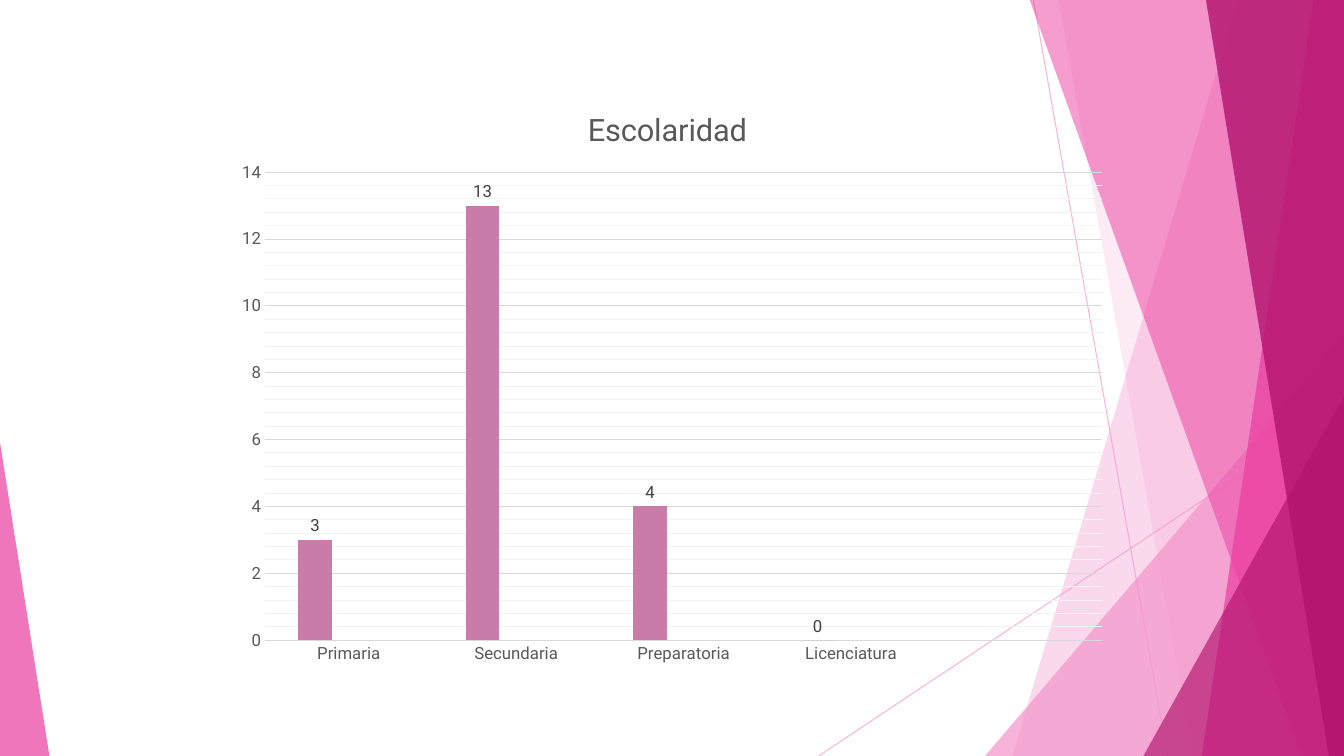
from lxml import etree
from pptx import Presentation
from pptx.chart.data import CategoryChartData
from pptx.dml.color import RGBColor
from pptx.enum.chart import XL_CHART_TYPE, XL_LABEL_POSITION, XL_TICK_MARK
from pptx.enum.shapes import MSO_CONNECTOR, MSO_SHAPE
from pptx.oxml import parse_xml
from pptx.oxml.ns import nsdecls, qn
from pptx.util import Inches, Pt

COLUMN = XL_CHART_TYPE.COLUMN_CLUSTERED
OUTSIDE_END = XL_LABEL_POSITION.OUTSIDE_END
NO_TICK = XL_TICK_MARK.NONE
STRAIGHT = MSO_CONNECTOR.STRAIGHT
TRIANGLE = MSO_SHAPE.ISOSCELES_TRIANGLE

BLACK = RGBColor(0x00, 0x00, 0x00)
LABEL_GRAY = RGBColor(0x40, 0x40, 0x40)
AXIS_GRAY = RGBColor(0x59, 0x59, 0x59)
GRID_GRAY = RGBColor(0xD9, 0xD9, 0xD9)
MINOR_GRAY = RGBColor(0xF2, 0xF2, 0xF2)
LIGHT_PINK = RGBColor(0xF4, 0x96, 0xCB)
HOT_PINK = RGBColor(0xEB, 0x3D, 0x9F)
MAGENTA = RGBColor(0xB2, 0x13, 0x6D)
MAUVE = RGBColor(0xCA, 0x7C, 0xA8)
PALE_PINK = RGBColor(0xF8, 0xC3, 0xDF)

FONT = "Roboto"
RIGHT, TOP, BOTTOM = 13.33, -0.01, 7.5


def style_font(font, size, color):
    font.name = FONT
    font.size = Pt(size)
    font.bold = False
    font.color.rgb = color


def write_text(frame, text, size=12, color=AXIS_GRAY):
    run = frame.paragraphs[0].add_run()
    run.text = text
    style_font(run.font, size, color)


def set_opacity(fill_parent, percent):
    color = fill_parent.find(".//" + qn("a:srgbClr"))
    etree.SubElement(color, qn("a:alpha")).set("val", str(percent * 1000))


def set_layout(element, inner=False, **fractions):
    for old in element.findall(qn("c:layout")):
        element.remove(old)
    target = '<c:layoutTarget val="inner"/>' if inner else ""
    modes = "".join(f'<c:{key}Mode val="edge"/>' for key in ("x", "y"))
    values = "".join(f'<c:{key} val="{value}"/>' for key, value in fractions.items())
    layout = parse_xml(
        f'<c:layout {nsdecls("c")}><c:manualLayout>{target}{modes}{values}'
        "</c:manualLayout></c:layout>"
    )
    text = element.find(qn("c:tx"))
    if text is None:
        element.insert(0, layout)
    else:
        text.addnext(layout)


class FacetSlide:
    def __init__(self, slide):
        self.slide = slide

    def line(self, start, end, color, opacity):
        ends = [Inches(value) for value in (*start, *end)]
        ray = self.slide.shapes.add_connector(STRAIGHT, *ends)
        ray.line.color.rgb = color
        ray.line.width = Pt(0.75)
        properties = ray._element.spPr
        set_opacity(properties, opacity)
        etree.SubElement(properties, qn("a:effectLst"))

    def paint(self, facet, color, opacity):
        facet.shadow.inherit = False
        facet.fill.solid()
        facet.fill.fore_color.rgb = color
        set_opacity(facet._element.spPr, opacity)
        facet.line.fill.background()

    def band(self, top_left, bottom_left, color, opacity):
        corners = [(RIGHT, TOP), (RIGHT, BOTTOM), (bottom_left, BOTTOM)]
        builder = self.slide.shapes.build_freeform(Inches(top_left), Inches(TOP))
        builder.add_line_segments([(Inches(x), Inches(y)) for x, y in corners])
        self.paint(builder.convert_to_shape(), color, opacity)

    def triangle(self, left, top, width, apex, color, opacity):
        box = [Inches(value) for value in (left, top, width, BOTTOM - top)]
        facet = self.slide.shapes.add_shape(TRIANGLE, *box)
        facet.adjustments[0] = apex
        self.paint(facet, color, opacity)

    def rule(self, line, color):
        line.color.rgb = color
        line.width = Pt(0.75)

    def minor_gridlines(self, axis, color):
        axis.has_minor_gridlines = True
        gridlines = axis._element.find(qn("c:minorGridlines"))
        gridlines.append(parse_xml(
            f'<c:spPr {nsdecls("c", "a")}><a:ln w="{Pt(0.75)}"><a:solidFill>'
            f'<a:srgbClr val="{color}"/></a:solidFill></a:ln></c:spPr>'
        ))

    def column_chart(self, title, categories, series, box):
        data = CategoryChartData()
        data.categories = categories
        for name, values, _ in series:
            data.add_series(name, values)
        frame = self.slide.shapes.add_chart(COLUMN, *map(Inches, box), data)
        chart = frame.chart
        style_font(chart.font, 10, BLACK)
        chart.has_legend = False
        chart.has_title = True
        write_text(chart.chart_title.text_frame, title, size=22)
        set_layout(chart.chart_title._element, x=0.4, y=0.04)
        set_layout(chart._chartSpace.chart.plotArea, inner=True,
                   x=0.046, y=0.155, w=0.934, h=0.783)

        plot = chart.plots[0]
        plot.vary_by_categories = False
        plot.gap_width = 199
        plot.overlap = 0
        for columns, (_, _, color) in zip(plot.series, series):
            columns.format.fill.solid()
            columns.format.fill.fore_color.rgb = color
            labels = columns.data_labels
            labels.show_value = True
            labels.position = OUTSIDE_END
            style_font(labels.font, 12, LABEL_GRAY)

        for axis in (chart.category_axis, chart.value_axis):
            axis.major_tick_mark = NO_TICK
            axis.minor_tick_mark = NO_TICK
            style_font(axis.tick_labels.font, 12, AXIS_GRAY)
        self.rule(chart.category_axis.format.line, GRID_GRAY)

        scale = chart.value_axis
        scale.minimum_scale, scale.maximum_scale = 0, 14
        scale.major_unit, scale.minor_unit = 2, 0.4
        scale.format.line.fill.background()
        scale.has_major_gridlines = True
        self.rule(scale.major_gridlines.format.line, GRID_GRAY)
        self.minor_gridlines(scale, MINOR_GRAY)


def main():
    deck = Presentation()
    deck.slide_width = Inches(13.33)
    deck.slide_height = Inches(7.5)
    page = FacetSlide(deck.slides.add_slide(deck.slide_layouts[6]))

    page.line((10.25, 0), (11.58, BOTTOM), LIGHT_PINK, 70)
    page.line((RIGHT, 4.03), (8.12, BOTTOM), LIGHT_PINK, 70)
    page.band(12.28, 10.04, LIGHT_PINK, 36)
    page.band(10.5, 11.83, LIGHT_PINK, 20)
    page.triangle(9.77, 3.33, 3.56, 1, LIGHT_PINK, 72)
    page.band(10.21, 12.91, HOT_PINK, 50)
    page.band(13.03, 11.92, HOT_PINK, 70)
    page.band(11.96, 13.18, MAGENTA, 80)
    page.triangle(11.34, 3.93, 1.99, 1, MAGENTA, 66)
    page.triangle(0, 4.39, 0.49, 0, HOT_PINK, 70)

    no_values = [None] * 5
    page.column_chart(
        "Escolaridad",
        ["Primaria", "Secundaria", "Preparatoria", "Licenciatura", ""],
        [
            ("Series 1", [3, 13, 4, 0, None], MAUVE),
            ("Series 2", no_values, LIGHT_PINK),
            ("Series 3", no_values, PALE_PINK),
        ],
        (2.22, 0.79, 8.89, 5.93),
    )
    deck.save("out.pptx")


if __name__ == "__main__":
    main()
